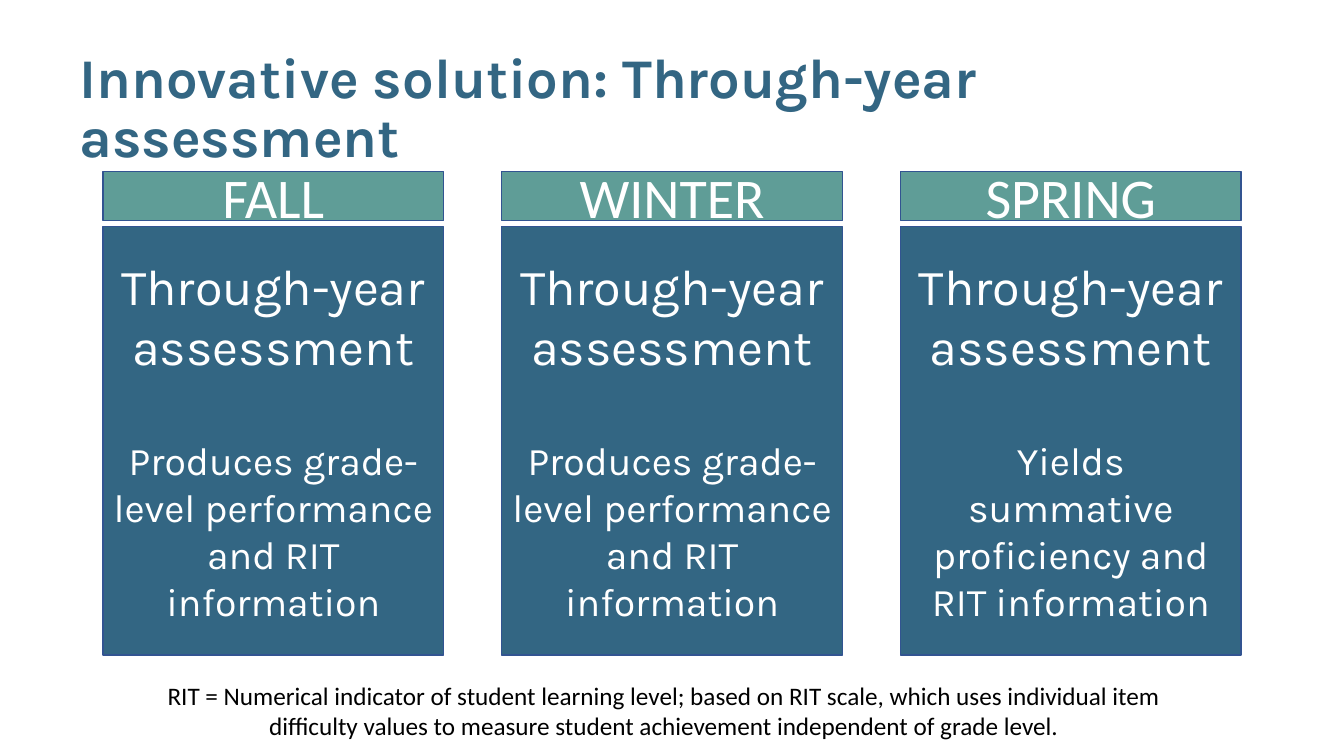
from dataclasses import dataclass

from pptx import Presentation
from pptx.dml.color import RGBColor
from pptx.enum.shapes import MSO_SHAPE as Preset
from pptx.enum.text import MSO_ANCHOR as Anchor, PP_ALIGN as Align
from pptx.shapes.autoshape import Shape
from pptx.slide import Slide
from pptx.text.text import TextFrame
from pptx.util import Inches, Pt

BLUE = RGBColor(0x33, 0x66, 0x83)
GREEN = RGBColor(0x5F, 0x9D, 0x97)
OUTLINE = RGBColor(0x32, 0x54, 0x91)
WHITE = RGBColor(0xFF, 0xFF, 0xFF)
BLACK = RGBColor(0x00, 0x00, 0x00)

FIRST_LEFT, LAST_LEFT = 1.02, 8.93
COLUMN_WIDTH = 3.38


@dataclass(frozen=True)
class Season:
    name: str
    heading: str
    outcome: str


@dataclass(frozen=True)
class TextStyle:
    font: str
    size: int
    color: RGBColor
    bold: bool = False
    align: Align = Align.CENTER
    line_spacing: float = 1.0
    space_before: int = 0


TITLE = TextStyle("Karla", 40, BLUE, bold=True, align=Align.LEFT, line_spacing=0.89)
SEASON_NAME = TextStyle("Calibri", 40, WHITE)
HEADING = TextStyle("Karla", 36, WHITE)
OUTCOME = TextStyle("Karla", 28, WHITE, space_before=43)
FOOTNOTE = TextStyle("Calibri", 18, BLACK)

GRADE_LEVEL = "Produces grade-level performance and RIT information"
SUMMATIVE = "Yields summative proficiency and RIT information"
SEASONS = [
    Season("FALL", "Through-year assessment", GRADE_LEVEL),
    Season("WINTER", "Through-year assessment", GRADE_LEVEL),
    Season("SPRING", "Through-year assessment", SUMMATIVE),
]


def write(frame: TextFrame, *lines: tuple[str, TextStyle]) -> None:
    """Fill a text frame with one styled paragraph per line."""
    frame.word_wrap = True
    for index, (text, style) in enumerate(lines):
        paragraph = frame.add_paragraph() if index else frame.paragraphs[0]
        paragraph.alignment = style.align
        paragraph.line_spacing = style.line_spacing
        paragraph.space_before = Pt(style.space_before)
        run = paragraph.add_run()
        run.text = text
        run.font.name = style.font
        run.font.size = Pt(style.size)
        run.font.bold = style.bold
        run.font.color.rgb = style.color


def add_text(slide: Slide, left: float, top: float, width: float, height: float,
             *lines: tuple[str, TextStyle]) -> None:
    box = slide.shapes.add_textbox(Inches(left), Inches(top), Inches(width), Inches(height))
    write(box.text_frame, *lines)


def add_panel(slide: Slide, left: float, top: float, height: float, fill: RGBColor) -> Shape:
    panel = slide.shapes.add_shape(
        Preset.RECTANGLE, Inches(left), Inches(top), Inches(COLUMN_WIDTH), Inches(height))
    panel.shadow.inherit = False
    panel.fill.solid()
    panel.fill.fore_color.rgb = fill
    panel.line.color.rgb = OUTLINE
    panel.line.width = Pt(1)
    return panel


def add_season(slide: Slide, left: float, season: Season) -> None:
    add_panel(slide, left, 2.25, 4.25, BLUE)
    header = add_panel(slide, left, 1.7, 0.49, GREEN)
    header.text_frame.vertical_anchor = Anchor.MIDDLE
    write(header.text_frame, (season.name, SEASON_NAME))
    add_text(slide, left, 2.48, COLUMN_WIDTH, 3.8,
             (season.heading, HEADING), (season.outcome, OUTCOME))


def main() -> None:
    presentation = Presentation()
    presentation.slide_width = Inches(13.33)
    presentation.slide_height = Inches(7.5)
    slide = presentation.slides.add_slide(presentation.slide_layouts[6])

    # Title
    add_text(slide, 0.69, 0.45, 11.15, 1.1,
             ("Innovative solution: Through-year assessment", TITLE))

    # Season columns, evenly spaced
    step = (LAST_LEFT - FIRST_LEFT) / (len(SEASONS) - 1)
    for index, season in enumerate(SEASONS):
        add_season(slide, FIRST_LEFT + index * step, season)

    # Footnote
    add_text(slide, 1.33, 6.7, 10.51, 0.71,
             ("RIT = Numerical indicator of student learning level; based on RIT scale, "
              "which uses individual item difficulty values to measure student achievement "
              "independent of grade level.", FOOTNOTE))

    presentation.save("out.pptx")


if __name__ == "__main__":
    main()
